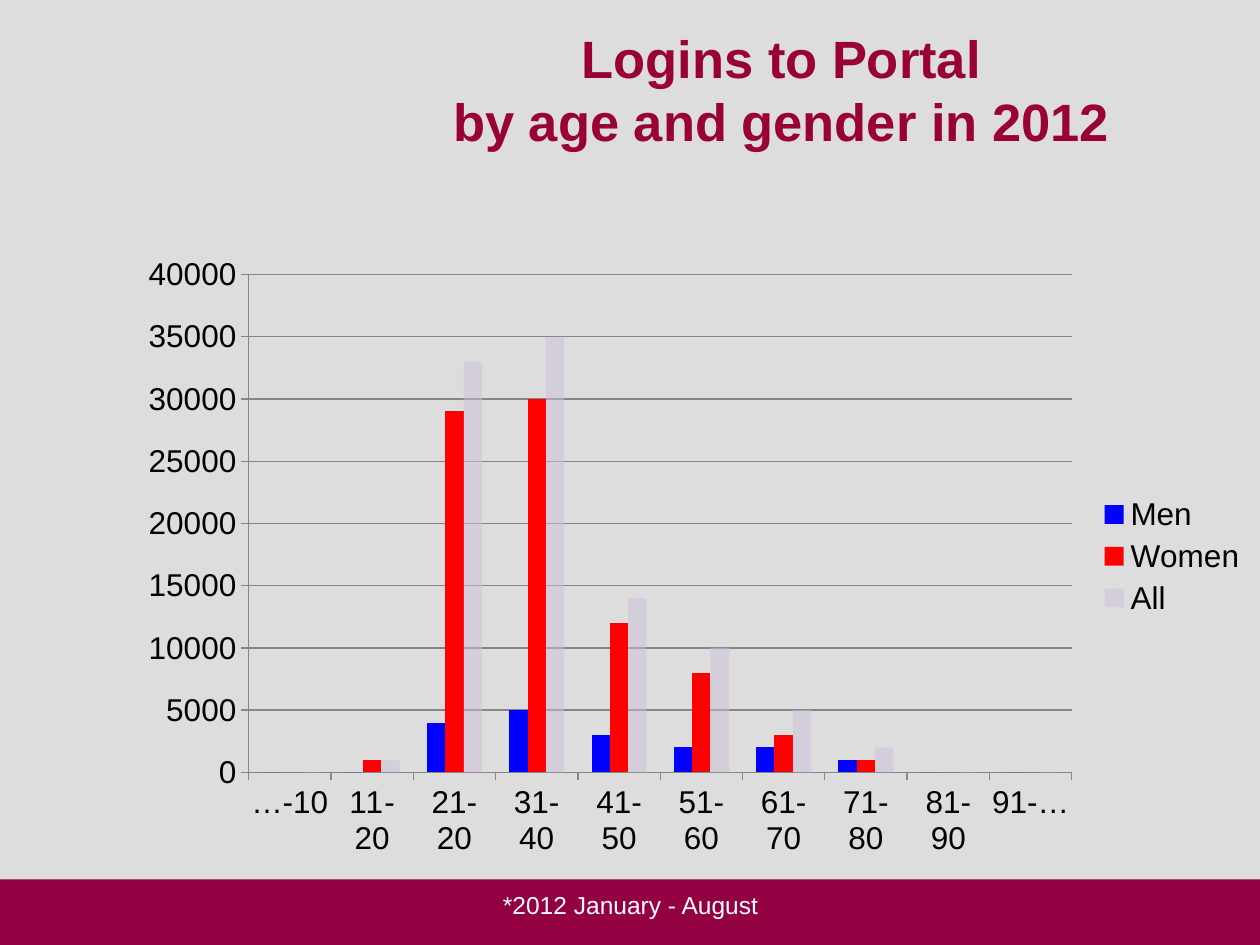
from pptx import Presentation, util as u
from pptx.chart.data import CategoryChartData
from pptx.dml.color import RGBColor
from pptx.enum import chart as ch, shapes, text
from pptx.oxml.ns import qn
from lxml import etree


def paint(color_format, hex_color):
    color_format.rgb = RGBColor.from_string(hex_color)


def style(font, size, hex_color, bold=False):
    font.name, font.size, font.bold = "Arial", u.Pt(size), bold
    paint(font.color, hex_color)


prs = Presentation()
prs.slide_width, prs.slide_height = W, H = u.Inches(10), u.Inches(7.5)
slide = prs.slides.add_slide(prs.slide_layouts[5])
slide.background.fill.solid()
paint(slide.background.fill.fore_color, "DDDDDD")

# Footer band with its note
band_top = u.Inches(6.98)
band = slide.shapes.add_shape(shapes.MSO_SHAPE.RECTANGLE, 0, band_top, W, H - band_top)
band.shadow.inherit = False
band.fill.solid()
paint(band.fill.fore_color, "930042")
band.line.fill.background()

note = slide.shapes.add_textbox(u.Inches(3.42), u.Inches(6.95), u.Inches(3.17), u.Inches(0.4))
note.text_frame.word_wrap = True
note.text_frame.vertical_anchor = text.MSO_ANCHOR.BOTTOM
note.text_frame.text = "*2012 January - August"
note.text_frame.paragraphs[0].alignment = text.PP_ALIGN.CENTER
style(note.text_frame.paragraphs[0].runs[0].font, 14, "FFFFFF")

# Logins per age group
logins = {
    "Men": ("0000FF", [0, 0, 4000, 5000, 3000, 2000, 2000, 1000, 0, 0]),
    "Women": ("FF0000", [0, 1000, 29000, 30000, 12000, 8000, 3000, 1000, 0, 0]),
    "All": ("CCC1DA", [0, 1000, 33000, 35000, 14000, 10000, 5000, 2000, 0, 0]),
}
data = CategoryChartData()
data.categories = ["…-10", "11-20", "21-20", "31-40", "41-50",
                   "51-60", "61-70", "71-80", "81-90", "91-…"]
for group, (_, counts) in logins.items():
    data.add_series(group, counts)

chart = slide.shapes.add_chart(ch.XL_CHART_TYPE.COLUMN_CLUSTERED, W // 10, u.Inches(1.94),
                               W * 9 // 10, u.Inches(4.95), data).chart
chart.has_title = False
style(chart.font, 18, "000000")
chart.has_legend = True
chart.legend.position = ch.XL_LEGEND_POSITION.RIGHT
chart.legend.include_in_layout = False

columns = chart.plots[0]
columns.gap_width, columns.overlap = 150, 0
columns.vary_by_categories = False
for series, (color, _) in zip(columns.series, logins.values()):
    series.invert_if_negative = False
    series.format.fill.solid()
    paint(series.format.fill.fore_color, color)
see_through = next(columns.series[2].format.fill._xPr.iter(qn("a:srgbClr")))
etree.SubElement(see_through, qn("a:alpha"), val="50000")

ages, counts = chart.category_axis, chart.value_axis
counts.minimum_scale, counts.maximum_scale, counts.major_unit = 0, 40000, 5000
counts.has_major_gridlines = True
for axis in (ages, counts):
    axis.major_tick_mark = ch.XL_TICK_MARK.OUTSIDE
    axis.minor_tick_mark = ch.XL_TICK_MARK.NONE
for line in (ages.format.line, counts.format.line, counts.major_gridlines.format.line):
    line.width = u.Pt(0.75)
    paint(line.color, "868686")

# Title
title = slide.shapes.title
title.left, title.top = u.Inches(2.64), u.Inches(0.08)
title.width, title.height = u.Inches(7.24), u.Inches(1.25)
title.text_frame.text = "Logins to Portal \vby age and gender in 2012 "
title.text_frame.auto_size = text.MSO_AUTO_SIZE.NONE
title.text_frame.vertical_anchor = text.MSO_ANCHOR.MIDDLE
heading = title.text_frame.paragraphs[0]
heading.alignment = text.PP_ALIGN.CENTER
for run in heading.runs:
    style(run.font, 30, "990033", bold=True)

prs.save("out.pptx")
